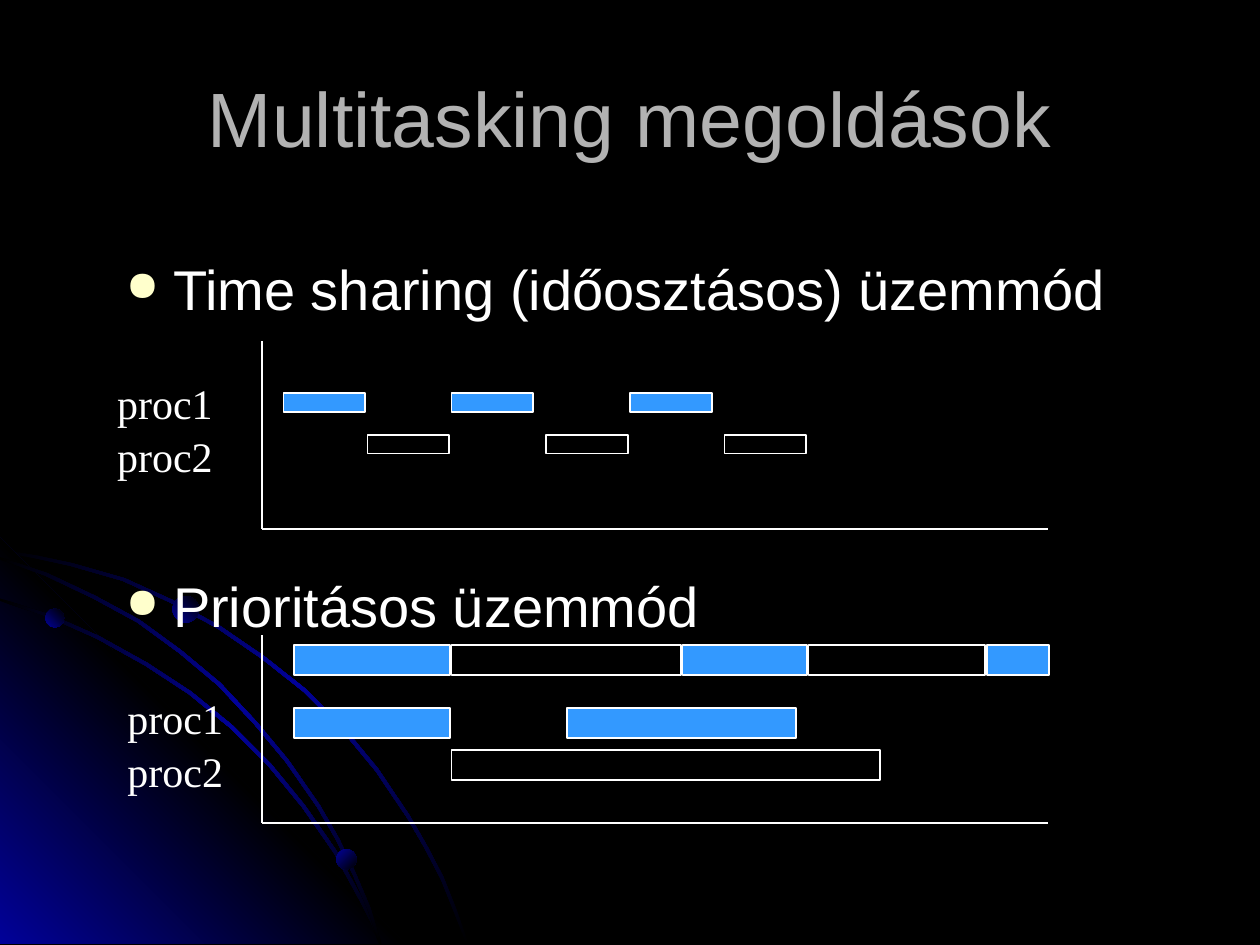
from dataclasses import dataclass

from lxml import etree
from pptx import Presentation
from pptx import util as u
from pptx.dml.color import RGBColor
from pptx.enum import shapes, text
from pptx.oxml import ns

Pt = u.Pt


@dataclass(frozen=True)
class Theme:
    black: str = "000000"
    glow: str = "010199"
    title: str = "B2B2B2"
    white: str = "FFFFFF"
    bullet: str = "FFFFCC"
    proc1: str = "3399FF"
    sans: str = "Arial"
    serif: str = "Times New Roman"
    title_size: int = 44
    body_size: int = 32
    label_size: int = 24


THEME = Theme()
BOTTOM = 539.3
AXIS_LEFT, AXIS_RIGHT = 149.8, 599
AXIS_HEIGHT = 107.2

# Lower edges of the three glowing arcs
ARCS = [
    [(0, 315.4), (20, 319), (40, 323.3), (70, 331.9), (97, 344.2),
     (124.6, 359.3), (149.8, 376.6), (173.5, 395.3), (195, 416.9),
     (214.6, 440.6), (232.6, 467.3), (242.6, 484.6), (252, 502.6),
     (259.2, 520.6), (266.4, BOTTOM)],
    [(0, 343.4), (28, 352.8), (55.4, 365), (82.8, 380.2), (108, 396.7),
     (131.8, 416.2), (153.4, 437.8), (172.8, 461.5), (190.8, 487.4),
     (205.2, 514), (211.7, 527), (216.7, BOTTOM)],
    [(0, 319.7), (25.9, 329), (53.3, 342), (78.5, 355.7), (102.2, 373),
     (124.6, 391.7), (145.4, 414), (163.4, 435.6), (181.4, 461.5),
     (192.2, 480.2), (201.6, 499.7), (210.2, 519.8), (216.7, BOTTOM)],
]
CORNER = [(231.8, BOTTOM), (0, BOTTOM), (0, 307.4)]
# left, top, diameter, gradient angle
DOTS = [(25.9, 347.8, 10.8, 315), (192.2, 485.3, 11.5, 45),
        (98.6, 340.6, 15.1, 315)]

# Bars: left, width
SLICE = 46.8
SHARED_PROC1 = [(left, SLICE) for left in (162, 258, 360)]
SHARED_PROC2 = [(left, SLICE) for left in (210, 312, 414)]
RUNNING_PROC1 = [(168, 89.3), (390, 71.3), (564, 35.3)]
RUNNING_PROC2 = [(258, 131), (462, 100.8)]
WANTED_PROC1 = [(168, 89.3), (324, 131)]
WANTED_PROC2 = [(258, 244.8)]


def rgb(color):
    return RGBColor.from_string(color)


def fill_gradient(shape, colors, angle):
    """Spread the colours evenly along a linear gradient, without outline."""
    shape.shadow.inherit = False
    shape.line.fill.background()
    shape.fill.gradient()
    gradient = shape.element.spPr.find(ns.qn("a:gradFill"))
    for child in list(gradient):
        gradient.remove(child)
    stops = etree.SubElement(gradient, ns.qn("a:gsLst"))
    for index, color in enumerate(colors):
        position = index * 100000 // (len(colors) - 1)
        stop = etree.SubElement(stops, ns.qn("a:gs"), pos=str(position))
        etree.SubElement(stop, ns.qn("a:srgbClr"), val=color)
    etree.SubElement(gradient, ns.qn("a:lin"), ang=str(angle * 60000), scaled="0")


def add_outline(page, points):
    scaled = [(Pt(x), Pt(y)) for x, y in points]
    builder = page.shapes.build_freeform(*scaled[0])
    builder.add_line_segments(scaled[1:], close=True)
    return builder.convert_to_shape()


def add_arc(page, edge):
    """Draw a thin ribbon whose second edge lies up and right of the first."""
    upper = [(x + 1.4 if x else 0, y if y == BOTTOM else y - 1.4)
             for x, y in reversed(edge)]
    ribbon = add_outline(page, edge + upper)
    fill_gradient(ribbon, (THEME.black, THEME.glow, THEME.black), 45)


def add_corner(page):
    corner = add_outline(page, CORNER)
    fill_gradient(corner, (THEME.glow, THEME.black, THEME.glow), 315)


def add_dot(page, left, top, size, angle):
    dot = page.shapes.add_shape(shapes.MSO_SHAPE.OVAL,
                                Pt(left), Pt(top), Pt(size), Pt(size))
    fill_gradient(dot, (THEME.glow, THEME.black), angle)


def add_text(page, place, lines, font, size, color):
    box = page.shapes.add_textbox(*map(Pt, place))
    frame = box.text_frame
    frame.word_wrap = True
    frame.text = "\n".join(lines)
    for para in frame.paragraphs:
        para.font.name = font
        para.font.size = Pt(size)
        para.font.color.rgb = rgb(color)
    return frame


def add_title(page):
    frame = add_text(page, (36, 21.6, 648, 90), ["Multitasking megoldások"],
                     THEME.sans, THEME.title_size, THEME.title)
    frame.vertical_anchor = text.MSO_ANCHOR.MIDDLE
    frame.paragraphs[0].alignment = text.PP_ALIGN.CENTER


def set_bullet(para):
    props = para._p.get_or_add_pPr()
    props.set("marL", str(Pt(27)))
    props.set("indent", str(Pt(-27)))
    color = etree.Element(ns.qn("a:buClr"))
    etree.SubElement(color, ns.qn("a:srgbClr"), val=THEME.bullet)
    size = etree.Element(ns.qn("a:buSzPct"), val="75000")
    mark = etree.Element(ns.qn("a:buChar"), char="●")
    defaults = props.find(ns.qn("a:defRPr"))
    for item in (color, size, mark):
        defaults.addprevious(item)


def add_modes(page):
    frame = add_text(page, (64.8, 142, 612, 322),
                     ["Time sharing (időosztásos) üzemmód", "Prioritásos üzemmód"],
                     THEME.sans, THEME.body_size, THEME.white)
    frame.paragraphs[1].space_before = Pt(142.6)
    for para in frame.paragraphs:
        set_bullet(para)


def add_line(page, start, end):
    line = page.shapes.add_connector(shapes.MSO_CONNECTOR.STRAIGHT,
                                     *map(Pt, start + end))
    line.line.color.rgb = rgb(THEME.white)
    line.line.width = Pt(1)
    etree.SubElement(line.element.spPr, ns.qn("a:effectLst"))


def add_axes(page, base):
    add_line(page, (AXIS_LEFT, base), (AXIS_RIGHT, base))
    add_line(page, (AXIS_LEFT, base - AXIS_HEIGHT), (AXIS_LEFT, base))


def add_labels(page, left, top):
    for row, name in enumerate(("proc1", "proc2")):
        add_text(page, (left, top + row * 30.2, 72, 36), [name],
                 THEME.serif, THEME.label_size, THEME.white)


def add_bars(page, bars, top, height, color=None):
    for left, width in bars:
        bar = page.shapes.add_shape(shapes.MSO_SHAPE.RECTANGLE,
                                    Pt(left), Pt(top), Pt(width), Pt(height))
        bar.shadow.inherit = False
        bar.line.color.rgb = rgb(THEME.white)
        bar.line.width = Pt(1)
        if color:
            bar.fill.solid()
            bar.fill.fore_color.rgb = rgb(color)
        else:
            bar.fill.background()


def main():
    deck = Presentation()
    deck.slide_width, deck.slide_height = Pt(720), Pt(540)
    page = deck.slides.add_slide(deck.slide_layouts[6])
    page.background.fill.solid()
    page.background.fill.fore_color.rgb = rgb(THEME.black)

    add_arc(page, ARCS[0])
    add_corner(page)
    for edge in ARCS[1:]:
        add_arc(page, edge)
    for dot in DOTS:
        add_dot(page, *dot)

    add_title(page)
    add_modes(page)

    add_axes(page, 302.2)
    add_labels(page, 59.8, 212.4)
    add_bars(page, SHARED_PROC1, 224.6, 10.8, THEME.proc1)
    add_bars(page, SHARED_PROC2, 248.4, 10.8)

    add_axes(page, 470.2)
    add_labels(page, 65.8, 392.4)
    add_bars(page, RUNNING_PROC1, 368.6, 17.3, THEME.proc1)
    add_bars(page, RUNNING_PROC2, 368.6, 17.3)
    add_bars(page, WANTED_PROC1, 404.6, 17.3, THEME.proc1)
    add_bars(page, WANTED_PROC2, 428.4, 17.3)

    deck.save("out.pptx")


if __name__ == "__main__":
    main()
